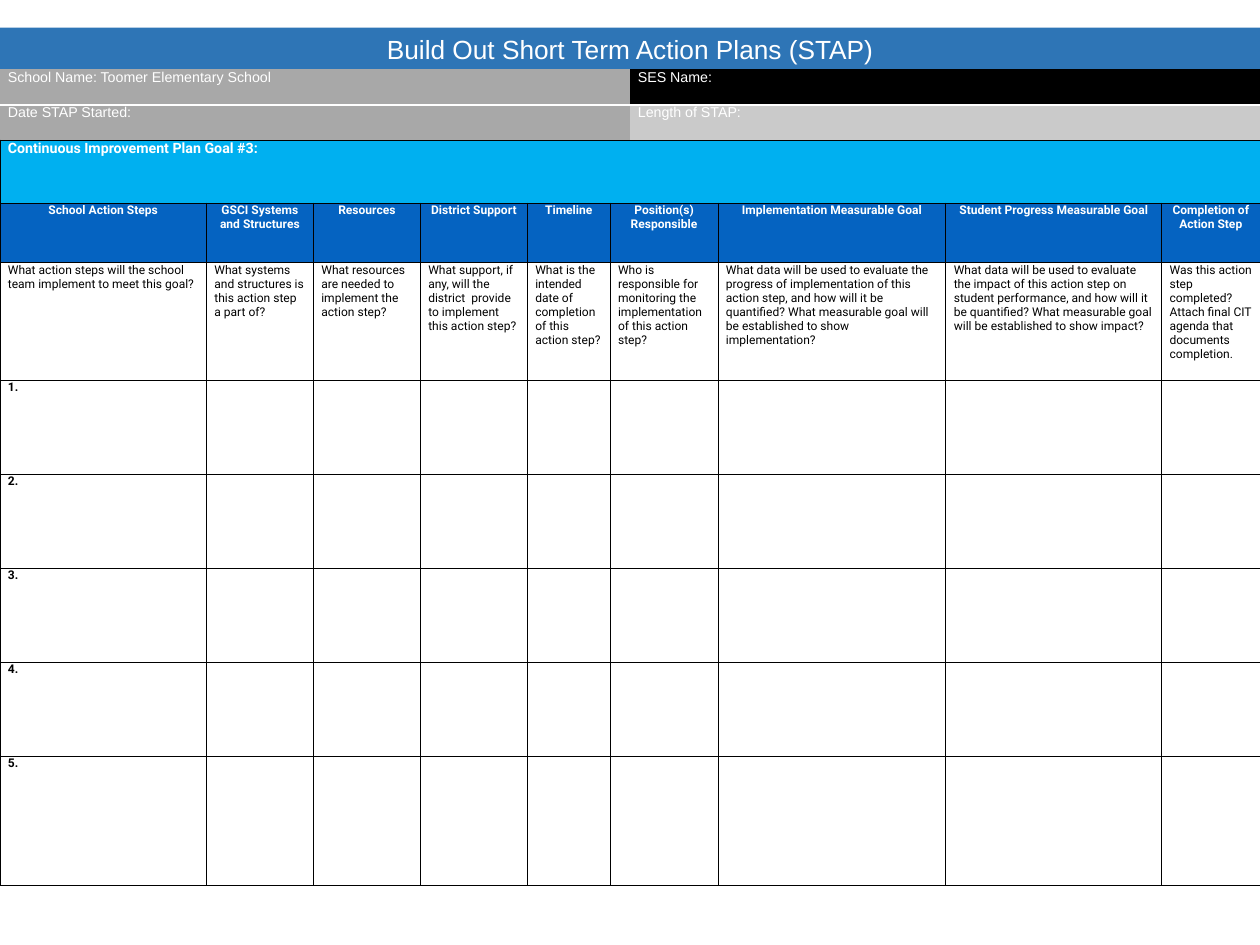
from lxml import etree
from pptx import Presentation
from pptx.dml.color import RGBColor
from pptx.enum.text import MSO_ANCHOR, MSO_AUTO_SIZE, PP_ALIGN
from pptx.oxml.ns import qn
from pptx.util import Cm, Pt

CENTER, LEFT = PP_ALIGN.CENTER, PP_ALIGN.LEFT
MIDDLE = MSO_ANCHOR.MIDDLE
NO_AUTOFIT = MSO_AUTO_SIZE.NONE

WHITE = RGBColor(0xFF, 0xFF, 0xFF)
BLACK = RGBColor(0, 0, 0)
TITLE_BLUE = RGBColor(0x2E, 0x75, 0xB6)
GRAY = RGBColor(0xA8, 0xA8, 0xA8)
LIGHT_GRAY = RGBColor(0xCA, 0xCA, 0xCA)
GOAL_BLUE = RGBColor(0x00, 0xB0, 0xF0)
HEAD_BLUE = RGBColor(0x05, 0x63, 0xC1)

PLAIN_STYLE = "{2D5ABB26-0587-4C30-8999-92F81FD0307C}"
SLIDE_W, SLIDE_H = 40.64, 30.48

TITLE = "Build Out Short Term Action Plans (STAP)"
SCHOOL_INFO = [
    [("School Name: Toomer Elementary School", GRAY), ("SES Name:", BLACK)],
    [("Date STAP Started:", GRAY), ("Length of STAP:", LIGHT_GRAY)],
]
GOAL = "Continuous Improvement Plan Goal #3:"
PLAN_COLUMNS = [
    (6.66, "School Action Steps",
     "What action steps will the school team implement to meet this goal?"),
    (3.45, "GSCI Systems and Structures",
     "What systems and structures is this action step a part of?"),
    (3.45, "Resources",
     "What resources are needed to implement the action step?"),
    (3.45, "District Support",
     "What support, if any, will the district  provide to implement this action step?"),
    (2.67, "Timeline",
     "What is the intended date of completion of this action step?"),
    (3.48, "Position(s) Responsible",
     "Who is responsible for monitoring the implementation of this action step?"),
    (7.35, "Implementation Measurable Goal",
     "What data will be used to evaluate the progress of implementation of this "
     "action step, and how will it be quantified? What measurable goal will be "
     "established to show implementation?"),
    (6.96, "Student Progress Measurable Goal",
     "What data will be used to evaluate the impact of this action step on student "
     "performance, and how will it be quantified? What measurable goal will be "
     "established to show impact?"),
    (3.17, "Completion of Action Step",
     "Was this action step completed? Attach final CIT agenda that documents completion."),
]
STEP_COUNT = 5
INFO_TOP, PLAN_TOP = 2.24, 4.52
INFO_ROWS = [1.14] * 2
PLAN_ROWS = [2.03, 1.93, 3.79] + [3.03] * (STEP_COUNT - 1) + [4.16]


def add_grid(slide, top, widths, heights):
    table = slide.shapes.add_table(
        len(heights), len(widths), 0, Cm(top), Cm(sum(widths)), Cm(sum(heights))).table
    table.first_row = table.horz_banding = False
    table._tbl.tblPr.find(qn("a:tableStyleId")).text = PLAIN_STYLE
    for col, width in zip(table.columns, widths):
        col.width = Cm(width)
    for row, height in zip(table.rows, heights):
        row.height = Cm(height)
    return table


def set_borders(cell, sides, color, width):
    tcPr = cell._tc.get_or_add_tcPr()
    for side in sides:
        ln = etree.SubElement(tcPr, qn(f"a:ln{side}"), w=str(Pt(width)))
        fill = etree.SubElement(ln, qn("a:solidFill"))
        etree.SubElement(fill, qn("a:srgbClr"), val=str(color))


def fill_cell(cell, fill):
    cell.fill.solid()
    cell.fill.fore_color.rgb = fill


def write(tf, text, font, size, color, bold=False, align=LEFT):
    p = tf.paragraphs[0]
    p.text = text
    p.alignment = align
    p.font.name = font
    p.font.size = Pt(size)
    p.font.bold = bold
    p.font.color.rgb = color


def write_cell(cell, *args, **kwargs):
    cell.margin_top = cell.margin_bottom = 0
    write(cell.text_frame, *args, **kwargs)


def add_title(slide):
    sp = slide.shapes.title
    sp.left, sp.top, sp.width, sp.height = 0, Cm(0.89), Cm(SLIDE_W), Cm(1.37)
    sp.fill.solid()
    sp.fill.fore_color.rgb = TITLE_BLUE
    tf = sp.text_frame
    tf.auto_size = NO_AUTOFIT
    tf.vertical_anchor = MIDDLE
    write(tf, TITLE, "Arial", 24, WHITE, align=CENTER)


def add_school_info(slide):
    table = add_grid(slide, INFO_TOP, [SLIDE_W / 2] * 2, INFO_ROWS)
    for r, row in enumerate(SCHOOL_INFO):
        for c, (text, fill) in enumerate(row):
            cell = table.cell(r, c)
            set_borders(cell, "T" if r else "B", WHITE, 2)
            fill_cell(cell, fill)
            write_cell(cell, text, "Arial", 13, WHITE)


def add_plan(slide):
    widths, heads, questions = zip(*PLAN_COLUMNS)
    table = add_grid(slide, PLAN_TOP, widths, PLAN_ROWS)
    for cell in table.iter_cells():
        set_borders(cell, "LRTB", BLACK, 1)
    goal = table.cell(0, 0)
    goal.merge(table.cell(0, len(widths) - 1))
    fill_cell(goal, GOAL_BLUE)
    write_cell(goal, GOAL, "Roboto", 13, WHITE, bold=True)
    for c, (head, question) in enumerate(zip(heads, questions)):
        fill_cell(table.cell(1, c), HEAD_BLUE)
        write_cell(table.cell(1, c), head, "Roboto", 11, WHITE, bold=True, align=CENTER)
        write_cell(table.cell(2, c), question, "Roboto", 11, BLACK)
    for step in range(1, STEP_COUNT + 1):
        write_cell(table.cell(step + 2, 0), f"{step}.", "Roboto", 11, BLACK, bold=True)


def main():
    prs = Presentation()
    prs.slide_width, prs.slide_height = Cm(SLIDE_W), Cm(SLIDE_H)
    slide = prs.slides.add_slide(prs.slide_layouts[5])
    add_title(slide)
    add_school_info(slide)
    add_plan(slide)
    prs.save("out.pptx")


if __name__ == "__main__":
    main()
